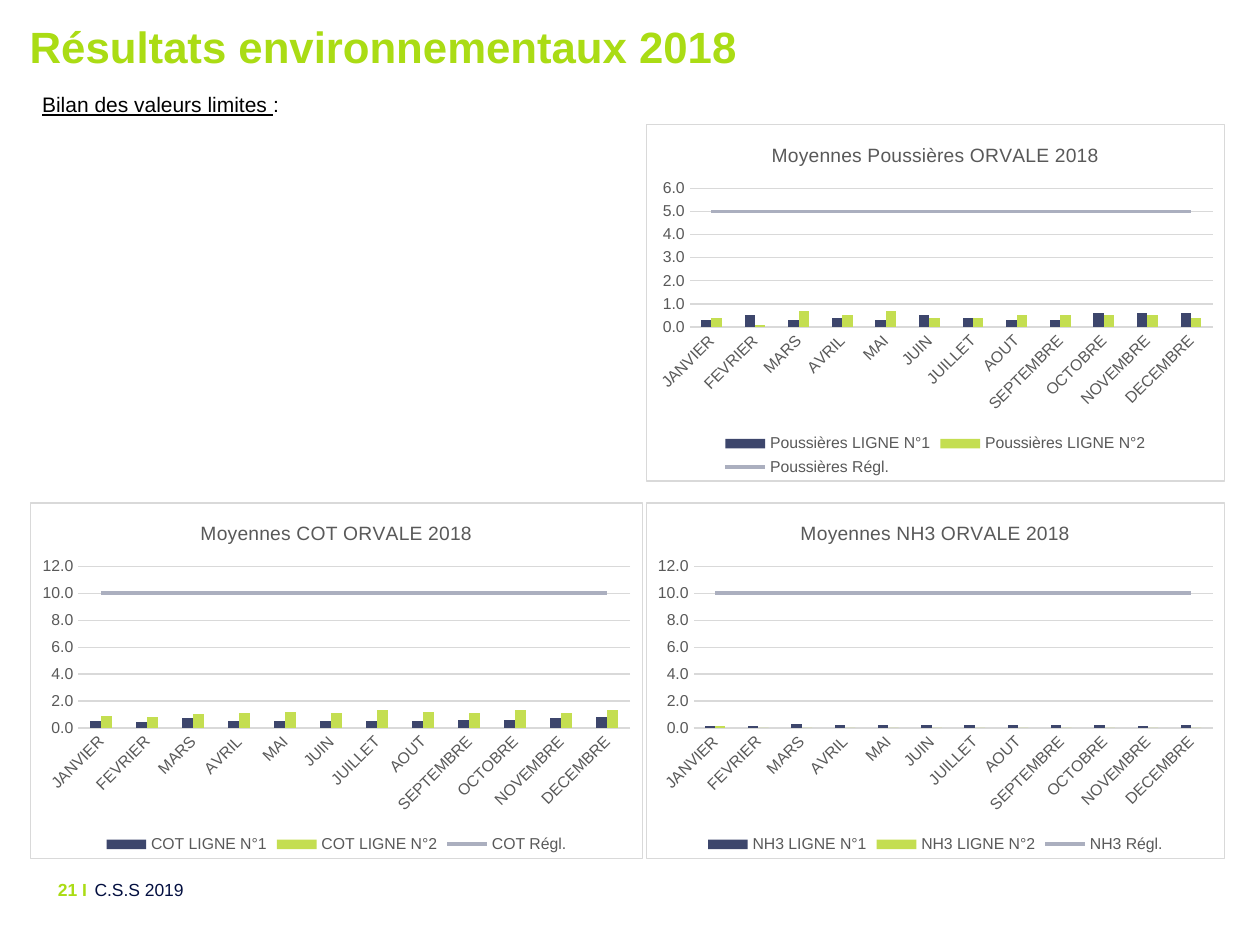
from copy import deepcopy

from pptx import Presentation
from pptx.chart.data import CategoryChartData
from pptx.dml.color import RGBColor
from pptx.enum.chart import XL_CHART_TYPE, XL_LEGEND_POSITION, XL_MARKER_STYLE, XL_TICK_MARK
from pptx.enum.text import PP_ALIGN
from pptx.oxml import parse_xml
from pptx.oxml.ns import nsdecls
from pptx.util import Pt

COLUMNS = XL_CHART_TYPE.COLUMN_CLUSTERED
BOTTOM = XL_LEGEND_POSITION.BOTTOM
NO_MARKER = XL_MARKER_STYLE.NONE
NO_TICK = XL_TICK_MARK.NONE
LEFT, RIGHT = PP_ALIGN.LEFT, PP_ALIGN.RIGHT

GREEN = RGBColor(0xAA, 0xDC, 0x14)
NAVY = RGBColor(0x03, 0x0F, 0x40)
BLACK = RGBColor(0, 0, 0)
GREY_TEXT = RGBColor(0x59, 0x59, 0x59)
GREY_LINE = RGBColor(0xD9, 0xD9, 0xD9)
LINE_1 = RGBColor(0x3D, 0x46, 0x6C)
LINE_2 = RGBColor(0xC4, 0xDE, 0x51)
LIMIT = RGBColor(0xAB, 0xAF, 0xBF)

FONT = "Arial"
MARGIN = 17
RIGHT_COLUMN = 369
BOTTOM_ROW = 287
FOOTER_TOP = 502.5

MONTHS = ["JANVIER", "FEVRIER", "MARS", "AVRIL", "MAI", "JUIN", "JUILLET", "AOUT",
          "SEPTEMBRE", "OCTOBRE", "NOVEMBRE", "DECEMBRE"]

# pollutant, (left, top, width, height), regulatory limit, axis maximum, axis step, line 1, line 2
CHARTS = [
    ("Poussières", (RIGHT_COLUMN, 70.8, 331, 204.5), 5, 6, 1,
     [0.3, 0.5, 0.3, 0.4, 0.3, 0.5, 0.4, 0.3, 0.3, 0.6, 0.6, 0.6],
     [0.4, 0.1, 0.7, 0.5, 0.7, 0.4, 0.4, 0.5, 0.5, 0.5, 0.5, 0.4]),
    ("COT", (MARGIN, BOTTOM_ROW, 350.5, 204), 10, 12, 2,
     [0.5, 0.4, 0.7, 0.5, 0.5, 0.5, 0.5, 0.5, 0.6, 0.6, 0.7, 0.8],
     [0.9, 0.8, 1.0, 1.1, 1.2, 1.1, 1.3, 1.2, 1.1, 1.3, 1.1, 1.3]),
    ("NH3", (RIGHT_COLUMN, BOTTOM_ROW, 331, 204), 10, 12, 2,
     [0.1, 0.1, 0.3, 0.2, 0.2, 0.2, 0.2, 0.2, 0.2, 0.2, 0.1, 0.2],
     [0.1] + [0] * 11),
]

presentation = Presentation()
presentation.slide_width, presentation.slide_height = Pt(720), Pt(540)
slide = presentation.slides.add_slide(presentation.slide_layouts[6])


def style_font(font, size, color, bold=False, underline=False):
    font.name, font.size, font.bold, font.underline = FONT, Pt(size), bold, underline
    font.color.rgb = color


def add_text(text, *, box, size, color, bold=False, underlined="", align=LEFT,
             insets=(0, 0, 0, 0), line_spacing=None):
    """Add a text box whose text starts with the optional underlined part."""
    frame = slide.shapes.add_textbox(*map(Pt, box)).text_frame
    frame.word_wrap = True
    frame.margin_left, frame.margin_top, frame.margin_right, frame.margin_bottom = map(Pt, insets)
    paragraph = frame.paragraphs[0]
    paragraph.alignment = align
    paragraph.line_spacing = line_spacing
    for part, underline in ((underlined, True), (text, False)):
        if part:
            run = paragraph.add_run()
            run.text = part
            style_font(run.font, size, color, bold, underline)


add_text("Résultats environnementaux 2018", box=(MARGIN, 14.7, 683.5, 34),
         size=25, color=GREEN, bold=True, line_spacing=0.9)
add_text("C.S.S 2019", box=(54, FOOTER_TOP, 527, 36.7), size=10, color=NAVY)
add_text("21 I", box=(0, FOOTER_TOP, 54, 36.7), size=10, color=GREEN, bold=True,
         align=RIGHT, insets=(0, 0, 4.32, 0))
add_text(":", underlined="Bilan des valeurs limites ", box=(MARGIN, 48.9, 683.5, 21.6),
         size=12, color=BLACK, insets=(7.2, 3.6, 7.2, 3.6))

for pollutant, box, limit, maximum, step, line_1, line_2 in CHARTS:
    data = CategoryChartData(number_format="0.0#")
    data.categories = MONTHS
    data.add_series(f"{pollutant} LIGNE N°1", line_1)
    data.add_series(f"{pollutant} LIGNE N°2", line_2)
    data.add_series(f"{pollutant} Régl.", [limit] * len(MONTHS))
    chart = slide.shapes.add_chart(COLUMNS, *map(Pt, box), data).chart
    style_font(chart.font, 10, BLACK)

    chart.has_title = True
    title = chart.chart_title.text_frame
    title.text = f"Moyennes {pollutant} ORVALE 2018"
    style_font(title.paragraphs[0].runs[0].font, 11, GREY_TEXT)
    chart.has_legend = True
    chart.legend.position = BOTTOM
    chart.legend.include_in_layout = False
    style_font(chart.legend.font, 9, GREY_TEXT)

    category_axis, value_axis = chart.category_axis, chart.value_axis
    for axis in (category_axis, value_axis):
        axis.major_tick_mark = axis.minor_tick_mark = NO_TICK
        style_font(axis.tick_labels.font, 9, GREY_TEXT)
    value_axis.minimum_scale, value_axis.maximum_scale = 0, maximum
    value_axis.major_unit = step
    value_axis.tick_labels.number_format = "0.0#"
    value_axis.tick_labels.number_format_is_linked = False
    value_axis.format.line.fill.background()
    for line in (category_axis.format.line, value_axis.major_gridlines.format.line):
        line.color.rgb, line.width = GREY_LINE, Pt(0.75)

    chart_space = chart._chartSpace
    chart_space.xpath("./c:txPr")[0].addprevious(parse_xml(
        f'<c:spPr {nsdecls("c", "a")}><a:solidFill><a:srgbClr val="FFFFFF"/></a:solidFill>'
        f'<a:ln w="{Pt(0.75)}"><a:solidFill><a:srgbClr val="{GREY_LINE}"/></a:solidFill></a:ln>'
        '</c:spPr>'))
    chart_space.xpath(".//c:catAx/c:txPr/a:bodyPr")[0].set("rot", "-2700000")

    # The limit becomes a line on hidden secondary axes with the same scale.
    bar_chart = chart_space.xpath(".//c:barChart")[0]
    line_chart = parse_xml(
        f'<c:lineChart {nsdecls("c")}><c:grouping val="standard"/><c:varyColors val="0"/>'
        '<c:marker val="1"/><c:axId val="1001"/><c:axId val="1002"/></c:lineChart>')
    limit_series = bar_chart.xpath("./c:ser")[2]
    for element in limit_series.xpath("./c:invertIfNegative"):
        limit_series.remove(element)
    line_chart.insert(2, limit_series)
    bar_chart.addnext(line_chart)
    primary_value = chart_space.xpath(".//c:valAx")[0]
    secondary_category = deepcopy(chart_space.xpath(".//c:catAx")[0])
    secondary_value = deepcopy(primary_value)
    for axis, own, other in ((secondary_category, "1001", "1002"),
                             (secondary_value, "1002", "1001")):
        axis.xpath("./c:axId")[0].set("val", own)
        axis.xpath("./c:crossAx")[0].set("val", other)
        axis.xpath("./c:delete")[0].set("val", "1")
    secondary_value.xpath("./c:axPos")[0].set("val", "r")
    secondary_value.xpath("./c:crosses")[0].set("val", "max")
    primary_value.addnext(secondary_value)
    secondary_value.addnext(secondary_category)

    bars, limit_plot = chart.plots
    bars.vary_by_categories = False
    bars.gap_width, bars.overlap = 219, 0
    for series, color in zip(bars.series, (LINE_1, LINE_2)):
        series.format.fill.solid()
        series.format.fill.fore_color.rgb = color
    limit_line = limit_plot.series[0]
    limit_line.smooth = False
    limit_line.marker.style = NO_MARKER
    limit_line.format.line.color.rgb = LIMIT
    limit_line.format.line.width = Pt(2.25)

presentation.save("out.pptx")
